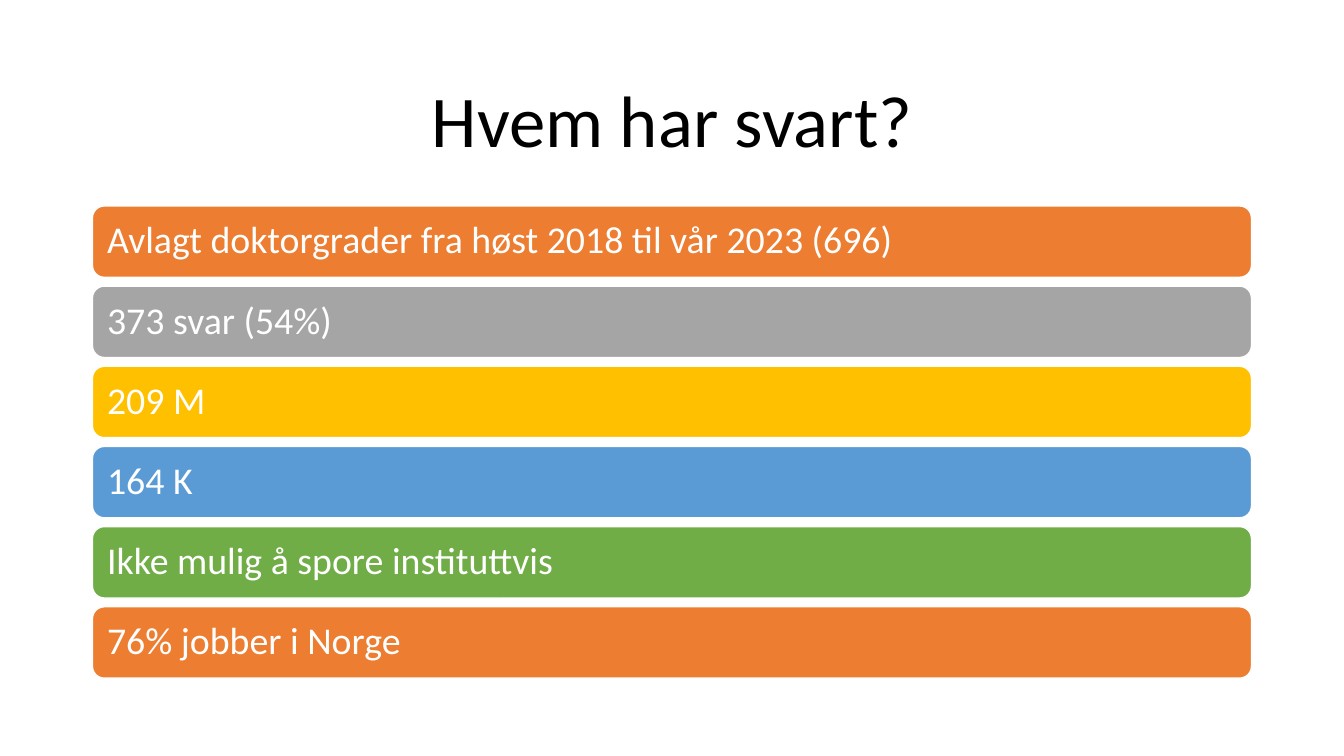
from dataclasses import dataclass

from pptx import Presentation
from pptx.dml.color import RGBColor
from pptx.enum import shapes, text
from pptx.util import Cm, Pt


@dataclass(frozen=True)
class Theme:
    font: str = "Calibri"
    title_size: int = 52
    bar_size: int = 27
    black: str = "000000"
    white: str = "FFFFFF"
    orange: str = "ED7D31"
    grey: str = "A5A5A5"
    yellow: str = "FFC000"
    blue: str = "5B9BD5"
    green: str = "70AD47"


@dataclass(frozen=True)
class Bar:
    label: str
    fill: str


THEME = Theme()
LEFT, WIDTH = 2.33, 29.21
BARS_TOP, BAR_HEIGHT, BAR_GAP = 5.19, 1.8, 0.22
BAR_INSET = 0.37

BARS = [
    Bar("Avlagt doktorgrader fra høst 2018 til vår 2023 (696)", THEME.orange),
    Bar("373 svar (54%)", THEME.grey),
    Bar("209 M", THEME.yellow),
    Bar("164 K", THEME.blue),
    Bar("Ikke mulig å spore instituttvis", THEME.green),
    Bar("76% jobber i Norge", THEME.orange),
]


def write_line(tf, label: str, size: int, color: str, align) -> None:
    tf.word_wrap = True
    tf.auto_size = text.MSO_AUTO_SIZE.NONE
    tf.vertical_anchor = text.MSO_ANCHOR.MIDDLE
    p = tf.paragraphs[0]
    p.alignment = align
    p.line_spacing = 0.9
    r = p.add_run()
    r.text = label
    r.font.name = THEME.font
    r.font.size = Pt(size)
    r.font.color.rgb = RGBColor.from_string(color)


def add_title(slide, label: str) -> None:
    sp = slide.shapes.title
    sp.left, sp.top, sp.width, sp.height = Cm(LEFT), Cm(1.54), Cm(WIDTH), Cm(3.15)
    write_line(sp.text_frame, label, THEME.title_size, THEME.black, text.PP_ALIGN.CENTER)


def add_bar(slide, bar: Bar, top: float) -> None:
    sp = slide.shapes.add_shape(
        shapes.MSO_SHAPE.ROUNDED_RECTANGLE,
        Cm(LEFT), Cm(top), Cm(WIDTH), Cm(BAR_HEIGHT))
    sp.shadow.inherit = False
    sp.fill.solid()
    sp.fill.fore_color.rgb = RGBColor.from_string(bar.fill)
    sp.line.color.rgb = RGBColor.from_string(THEME.white)
    sp.line.width = Pt(1)
    tf = sp.text_frame
    # The rounded corners already push the text in by a fraction of their radius.
    corner = BAR_HEIGHT * sp.adjustments[0] * 0.29
    tf.margin_left = tf.margin_right = Cm(BAR_INSET - corner)
    write_line(tf, bar.label, THEME.bar_size, THEME.white, text.PP_ALIGN.LEFT)


def main() -> None:
    prs = Presentation()
    prs.slide_width, prs.slide_height = Cm(33.87), Cm(19.05)
    slide = prs.slides.add_slide(prs.slide_layouts[5])
    add_title(slide, "Hvem har svart?")
    for i, bar in enumerate(BARS):
        add_bar(slide, bar, BARS_TOP + i * (BAR_HEIGHT + BAR_GAP))
    prs.save("out.pptx")


if __name__ == "__main__":
    main()
